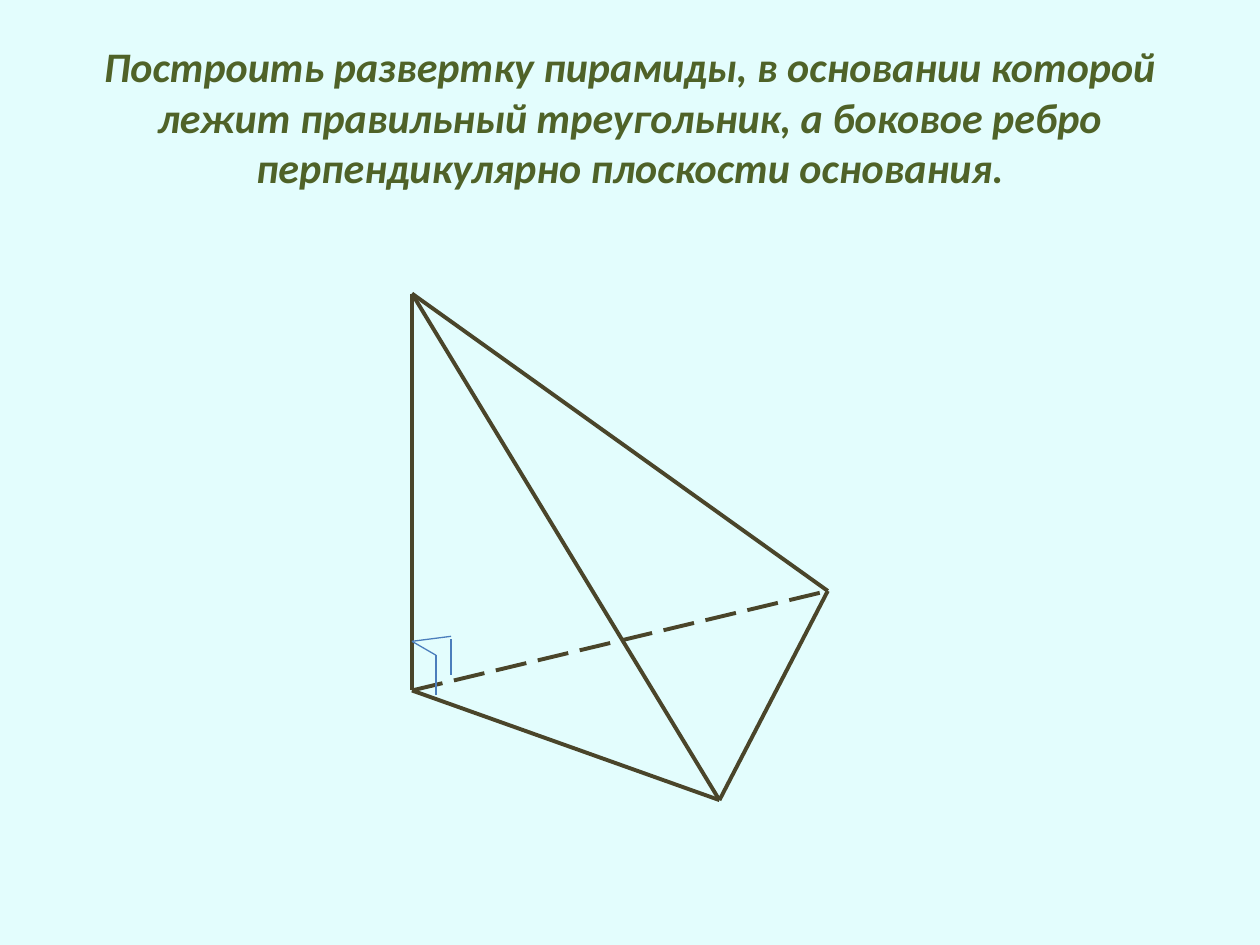
from dataclasses import dataclass

from pptx import Presentation
from pptx.dml.color import RGBColor
from pptx.enum.dml import MSO_LINE
from pptx.enum.shapes import MSO_CONNECTOR
from pptx.enum.text import MSO_ANCHOR, MSO_AUTO_SIZE, PP_ALIGN
from pptx.oxml.ns import qn
from pptx.util import Inches, Pt

COLUMNS, ROWS = 100, 75  # grid of square cells over the slide
TITLE_ONLY = 5


@dataclass(frozen=True)
class Theme:
    font: str = "Calibri"
    title_size: float = 24
    background: str = "E3FDFD"
    title: str = "4F6228"
    edge: str = "4A452A"
    angle_mark: str = "4B7EBC"
    edge_width: float = 2.25
    mark_width: float = 0.75


class SlideBuilder:
    def __init__(self, deck, theme):
        self.theme = theme
        self.cell_width = deck.slide_width / COLUMNS
        self.cell_height = deck.slide_height / ROWS
        self.slide = deck.slides.add_slide(deck.slide_layouts[TITLE_ONLY])
        fill = self.slide.background.fill
        fill.solid()
        fill.fore_color.rgb = RGBColor.from_string(theme.background)

    def place(self, column, row):
        return round(column * self.cell_width), round(row * self.cell_height)

    def title(self, wording, column, row, columns, rows):
        title = self.slide.shapes.title
        title.left, title.top = self.place(column, row)
        title.width, title.height = self.place(columns, rows)
        frame = title.text_frame
        frame.text = wording
        frame.word_wrap = True
        frame.auto_size = MSO_AUTO_SIZE.NONE
        frame.vertical_anchor = MSO_ANCHOR.MIDDLE
        paragraph = frame.paragraphs[0]
        paragraph.alignment = PP_ALIGN.CENTER
        font = paragraph.runs[0].font
        font.name, font.size = self.theme.font, Pt(self.theme.title_size)
        font.bold = font.italic = True
        font.color.rgb = RGBColor.from_string(self.theme.title)

    def segment(self, start, end, color, width, dash=None):
        segment = self.slide.shapes.add_connector(
            MSO_CONNECTOR.STRAIGHT, *self.place(*start), *self.place(*end))
        segment.line.color.rgb = RGBColor.from_string(color)
        segment.line.width = Pt(width)
        if dash:
            segment.line.dash_style = dash
        properties = segment._element.spPr
        properties.append(properties.makeelement(qn("a:effectLst"), {}))

    def edge(self, start, end, hidden=False):
        self.segment(start, end, self.theme.edge, self.theme.edge_width,
                     MSO_LINE.LONG_DASH if hidden else None)

    def angle_mark(self, start, end):
        self.segment(start, end, self.theme.angle_mark, self.theme.mark_width)


def main():
    deck = Presentation()
    deck.slide_width, deck.slide_height = Inches(10), Inches(7.5)
    task = SlideBuilder(deck, Theme())

    # Task wording
    task.title("Построить развертку пирамиды, в основании которой лежит "
               "правильный треугольник, а боковое ребро перпендикулярно "
               "плоскости основания.", 5, 3, 90, 12.5)

    # Pyramid: the apex stands straight above the foot
    apex, foot = (32.7, 23.3), (32.7, 54.8)
    front, right = (57.1, 63.5), (65.7, 46.9)
    task.edge(foot, front)
    task.edge(foot, right, hidden=True)
    task.edge(right, front)
    for base_corner in (foot, right, front):
        task.edge(apex, base_corner)

    # Right angles between the upright edge and the base
    on_upright = (32.7, 50.9)
    task.angle_mark(on_upright, (35.8, 50.5))
    task.angle_mark((34.6, 52), (34.6, 55.2))
    task.angle_mark(on_upright, (34.6, 52))
    task.angle_mark((35.8, 50.7), (35.8, 53.6))

    deck.save("out.pptx")


if __name__ == "__main__":
    main()
